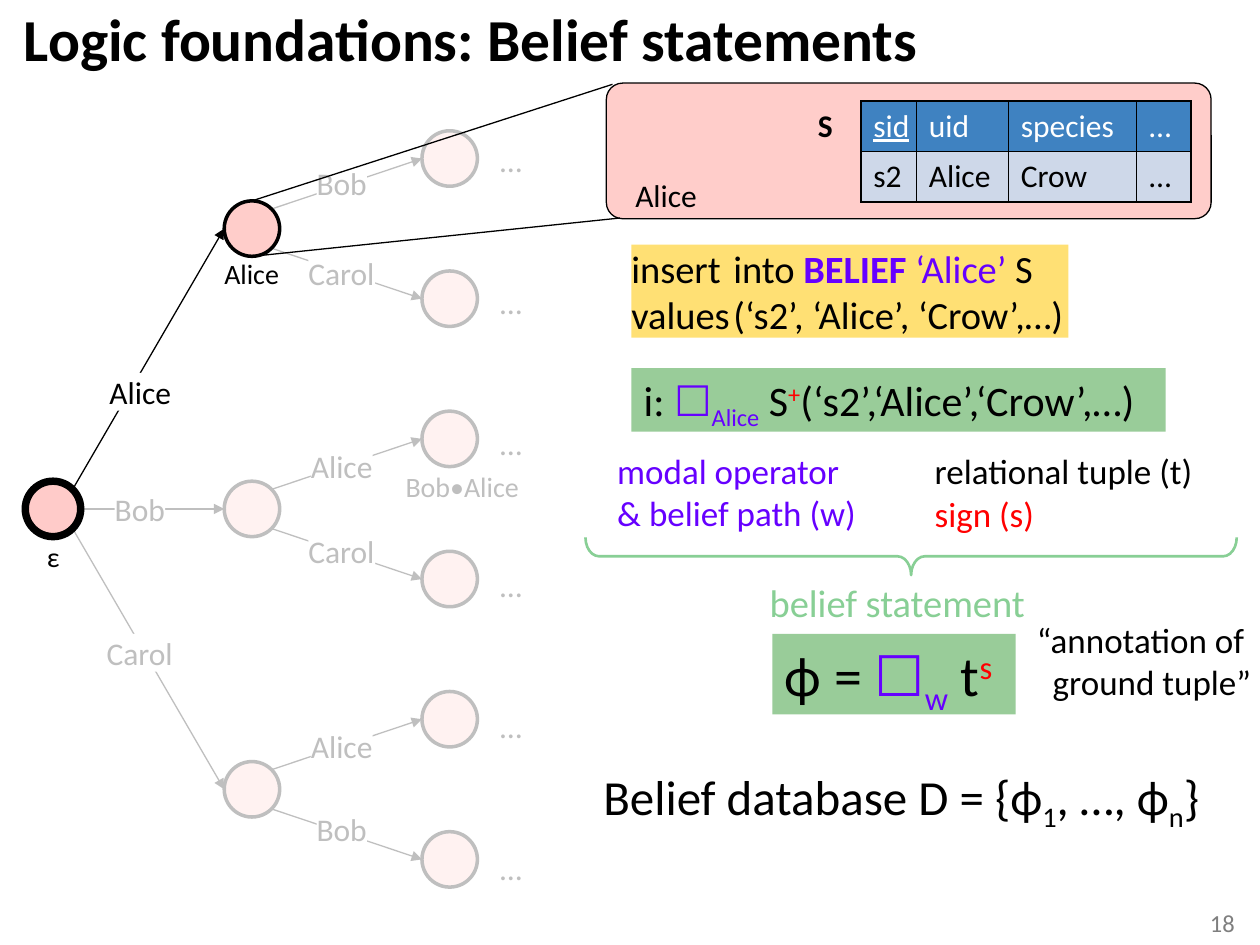
import math

from lxml import etree
from pptx import Presentation
from pptx import util as u
from pptx.dml.color import RGBColor
from pptx.enum import shapes, text
from pptx.oxml.ns import qn

COLORS = {"black": "000000", "white": "FFFFFF", "pink": "FFCDCA", "root": "FFCBC9",
          "yellow": "FFE074", "green": "99CC99", "mint": "88CF95", "violet": "6600FF",
          "red": "FF0000", "gray": "7F7F7F", "head": "3F82C1", "body": "CED8E9"}
NO_INSET = (0, 0, 0, 0)
BOX_INSET = (7.2, 3.6, 7.2, 3.6)
NOTE_INSET = (7.2, 3.6, 0, 0)
SUB, SUP = -25000, 30000
RADIUS = 15.85


def rgb(name):
    return RGBColor.from_string(COLORS[name])


class Painter:
    font = "Calibri"

    def __init__(self, slide):
        self.slide = slide

    def set_text(self, tf, paragraphs, size, inset=NO_INSET, align=text.PP_ALIGN.LEFT):
        """Each paragraph is a list of (text, colour, options) runs."""
        tf.word_wrap = False
        tf.vertical_anchor = text.MSO_ANCHOR.TOP
        tf.margin_left, tf.margin_top, tf.margin_right, tf.margin_bottom = map(u.Pt, inset)
        for i, runs in enumerate(paragraphs):
            p = tf.paragraphs[0] if i == 0 else tf.add_paragraph()
            p.alignment = align
            for run in runs:
                self.add_run(p, size, *run)

    def add_run(self, p, size, words, color="black", bold=False, underline=False, base=0):
        r = p.add_run()
        r.text = words
        r.font.name, r.font.size = self.font, u.Pt(size)
        r.font.bold, r.font.underline = bold, underline
        r.font.color.rgb = rgb(color)
        if base:
            r._r.get_or_add_rPr().set("baseline", str(base))

    def title(self, x, y, w, h, words, size):
        sp = self.slide.shapes.title
        sp.left, sp.top, sp.width, sp.height = map(u.Pt, (x, y, w, h))
        self.set_text(sp.text_frame, [[(words, "black", True)]], size)

    def label(self, x, y, w, h, paragraphs, size, inset=NO_INSET, align=text.PP_ALIGN.LEFT):
        sp = self.slide.shapes.add_textbox(*map(u.Pt, (x, y, w, h)))
        self.set_text(sp.text_frame, paragraphs, size, inset, align)

    def shape(self, kind, x, y, w, h, fill, line=None, width=0.75):
        sp = self.slide.shapes.add_shape(kind, *map(u.Pt, (x, y, w, h)))
        sp.shadow.inherit = False
        sp.fill.solid()
        sp.fill.fore_color.rgb = rgb(fill)
        if line:
            sp.line.color.rgb = rgb(line)
            sp.line.width = u.Pt(width)
        else:
            sp.line.fill.background()
        return sp

    def panel(self, x, y, w, h, paragraphs, size, fill="white", inset=NO_INSET):
        sp = self.shape(shapes.MSO_SHAPE.RECTANGLE, x, y, w, h, fill)
        self.set_text(sp.text_frame, paragraphs, size, inset)
        return sp

    def node(self, center, fill="pink", width=2):
        x, y = center
        self.shape(shapes.MSO_SHAPE.OVAL, x - RADIUS, y - RADIUS, 2 * RADIUS, 2 * RADIUS,
                   fill, "black", width)

    def line(self, start, end, arrow=False):
        c = self.slide.shapes.add_connector(shapes.MSO_CONNECTOR.STRAIGHT,
                                            *map(u.Pt, (*start, *end)))
        c.line.color.rgb = rgb("black")
        c.line.width = u.Pt(0.75)
        pr = c._element.spPr
        if arrow:
            etree.SubElement(pr.find(qn("a:ln")), qn("a:tailEnd"), type="triangle")
        etree.SubElement(pr, qn("a:effectLst"))

    def edge(self, parent, child):
        """Arrow from the parent's rim to the child's left side."""
        (x, y), (cx, cy) = parent, child
        side = (cy > y) - (cy < y)
        d = RADIUS * math.sqrt(0.5) if side else RADIUS
        self.line((x + d, y + side * d), (cx - RADIUS, cy), arrow=True)

    def edge_label(self, name, center_x, top):
        w = {"Bob": 28.8, "Alice": 35.3, "Carol": 38.2}[name]
        self.panel(center_x - w / 2, top, w, 21.6, [[(name,)]], 18)

    def table(self, x, y, widths, row_height, rows):
        frame = self.slide.shapes.add_table(len(rows), len(widths),
                                            *map(u.Pt, (x, y, sum(widths), row_height * len(rows))))
        t = frame.table
        t.first_row = t.horz_banding = False
        for col, w in zip(t.columns, widths):
            col.width = u.Pt(w)
        for i, row in enumerate(rows):
            t.rows[i].height = u.Pt(row_height)
            for j, run in enumerate(row):
                self.cell(t.cell(i, j), run, None if j == 0 else ("body" if i else "head"))

    def cell(self, cell, run, fill):
        self.set_text(cell.text_frame, [[run]] if run else [], 18)
        cell.vertical_anchor = text.MSO_ANCHOR.BOTTOM
        cell.margin_left, cell.margin_right = u.Pt(7.2), 0
        cell.margin_top = cell.margin_bottom = u.Pt(3.6)
        if fill:
            cell.fill.solid()
            cell.fill.fore_color.rgb = rgb(fill)
        else:
            cell.fill.background()
        pr = cell._tc.get_or_add_tcPr()
        for i, side in enumerate(("lnL", "lnR", "lnT", "lnB")):
            ln = etree.Element(qn("a:" + side), w=str(u.Pt(1)))
            if fill or side == "lnR":
                solid = etree.SubElement(ln, qn("a:solidFill"))
                etree.SubElement(solid, qn("a:srgbClr"), val=COLORS["black"])
            else:
                etree.SubElement(ln, qn("a:noFill"))
            pr.insert(i, ln)


def main():
    prs = Presentation()
    prs.slide_width, prs.slide_height = u.Pt(720), u.Pt(540)
    s = Painter(prs.slides.add_slide(prs.slide_layouts[5]))
    s.title(13.7, 1.4, 520, 41, "Logic foundations: Belief statements", 34)
    s.label(689, 519, 16.6, 17.3, [[("18", "gray")]], 14, align=text.PP_ALIGN.RIGHT)

    # Tree: one root, three children, two leaves under each child
    leaves = [(257, 90.6 + 80.1 * i) for i in range(6)]
    children = [(144, 130.65 + 160.2 * i) for i in range(3)]
    root = (30.3, children[1][1])
    alice = children[0]

    # Faded part of the tree
    s.label(231.8, 268.6, 64.8, 19.4, [[("Bob•Alice",)]], 16)
    for child in children[1:]:
        s.edge(root, child)
        s.node(child)
    for i, leaf in enumerate(leaves):
        s.edge(children[i // 2], leaf)
        s.node(leaf)
        s.panel(285.8, 80.6 + 80.9 * i, 12.2, 21.6, [[("…",)]], 18)
    s.edge_label("Bob", 80, 280.1)
    s.edge_label("Carol", 80, 362.2)
    leaf_names = ("Bob", "Carol", "Alice", "Carol", "Alice", "Bob")
    for name, top in zip(leaf_names, (93.6, 145.4, 255.6, 303.8, 415.4, 463)):
        s.edge_label(name, 195.3, top)
    veil = s.shape(shapes.MSO_SHAPE.RECTANGLE, 0, 52, 314, 464.4, "white")
    color = veil._element.spPr.find(qn("a:solidFill"))[0]
    etree.SubElement(color, qn("a:alpha"), val="75000")

    # Highlighted path
    s.node(root, "root", 4.25)
    s.edge(root, alice)
    s.node(alice)
    s.edge_label("Alice", 80.2, 213.1)
    s.label(26.8, 308.2, 7.2, 19.4, [[("ε",)]], 16)
    s.label(128.2, 146.9, 31.7, 19.4, [[("Alice",)]], 16)

    # Belief world of Alice
    world = s.shape(shapes.MSO_SHAPE.ROUNDED_RECTANGLE, 346.5, 47.5, 345.6, 77.5, "pink", "black")
    world.adjustments[0] = 0.12
    s.label(363, 100.8, 35.3, 21.6, [[("Alice",)]], 18)
    s.table(460.2, 57.7, (31.7, 31.7, 52.6, 73.4, 31), 28.8, [
        [("S", "black", True), ("sid", "white", False, True), ("uid", "white"),
         ("species", "white"), ("…", "white")],
        [None, ("s2",), ("Alice",), ("Crow",), ("…",)]])
    x, y = alice
    s.line((x, y - RADIUS), (350, 48.2))
    s.line((x, y + RADIUS), (354.2, 124.6))

    # Insert statement and its logical form
    insert = s.panel(360.8, 139.8, 249.8, 53.2, [
        [("insert\tinto ",), ("BELIEF ", "violet", True), ("‘Alice’ ", "violet"), ("S",)],
        [("values\t(‘s2’, ‘Alice’, ‘Crow’,…)",)]], 22, "yellow")
    for p in insert.text_frame.paragraphs:
        tabs = etree.SubElement(p._p.get_or_add_pPr(), qn("a:tabLst"))
        etree.SubElement(tabs, qn("a:tab"), pos=str(u.Pt(58.3)), algn="l")
    s.panel(360.8, 210.4, 305.3, 36.3, [[
        ("i: ",), ("☐", "violet"), ("Alice", "violet", False, False, SUB), (" S",),
        ("+", "red", False, False, SUP), ("(‘s2’,‘Alice’,‘Crow’,…)",)]], 24, "green", BOX_INSET)

    # Parts of a belief statement
    s.panel(345.6, 253.4, 144.7, 52, [[("modal operator", "violet")],
                                      [("& belief path (w)", "violet")]], 20, inset=NOTE_INSET)
    s.panel(527, 253.4, 156.2, 28, [[("relational tuple (t)",)]], 20, inset=NOTE_INSET)
    s.panel(527, 278, 64.8, 28, [[("sign (s)", "red")]], 20, inset=NOTE_INSET)
    s.panel(432.7, 327.6, 154.8, 30.2, [[("belief statement", "mint")]], 22, inset=NOTE_INSET)
    brace = s.shape(shapes.MSO_SHAPE.RIGHT_BRACE, 509.8, 131.8, 21.6, 372.2, "white", "mint", 1.5)
    brace.rotation = 90
    brace.adjustments[0] = 0.36
    s.panel(441.4, 362.2, 139, 46, [[
        ("ϕ = ",), ("☐", "violet"), ("w", "violet", False, False, SUB), (" t",),
        ("s", "red", False, False, SUP)]], 32, "green", BOX_INSET)
    note = s.panel(585.4, 350, 131, 52, [[("“annotation of",)], [("ground tuple”",)]], 20,
                   inset=NOTE_INSET)
    note.text_frame.paragraphs[1]._p.get_or_add_pPr().set("marL", str(u.Pt(9)))

    # Belief database
    s.panel(337.7, 434.2, 351.4, 37.4, [[
        ("Belief database D = {ϕ",), ("1", "black", False, False, SUB), (", …, ϕ",),
        ("n", "black", False, False, SUB), ("}",)]], 28, inset=NOTE_INSET)

    prs.save("out.pptx")


if __name__ == "__main__":
    main()
